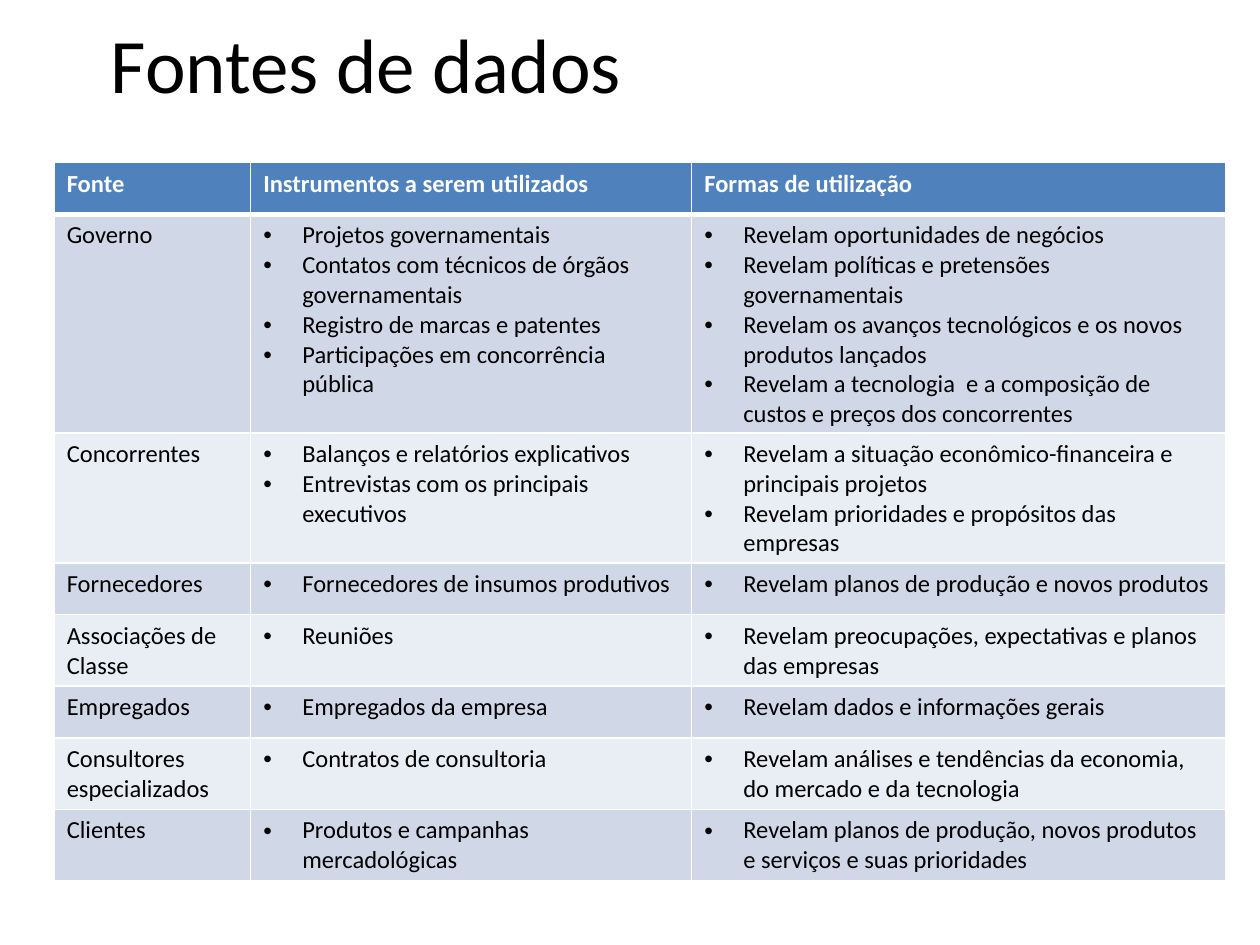
"""Build the slide on data sources with its title and table."""
import pptx
import pptx.dml.color
import pptx.enum.text
import pptx.oxml
import pptx.oxml.ns
import pptx.util
from lxml import etree

Inches, Pt = pptx.util.Inches, pptx.util.Pt
RGB = pptx.dml.color.RGBColor
BLACK, WHITE = RGB(0, 0, 0), RGB(255, 255, 255)
BLUE, DARK, LIGHT = RGB(0x4F, 0x81, 0xBD), RGB(0xD0, 0xD8, 0xE8), RGB(0xE9, 0xED, 0xF4)

TITLE = "Fontes de dados"
HEADS = ["Fonte", "Instrumentos a serem utilizados", "Formas de utilização"]
ROWS = [
    ("Governo",
     ["Projetos governamentais",
      "Contatos com técnicos de órgãos governamentais",
      "Registro de marcas e patentes",
      "Participações em concorrência pública"],
     ["Revelam oportunidades de negócios",
      "Revelam políticas e pretensões governamentais",
      "Revelam os avanços tecnológicos e os novos produtos lançados",
      "Revelam a tecnologia  e a composição de custos e preços dos concorrentes"]),
    ("Concorrentes",
     ["Balanços e relatórios explicativos",
      "Entrevistas com os principais executivos"],
     ["Revelam a situação econômico-financeira e principais projetos",
      "Revelam prioridades e propósitos das empresas"]),
    ("Fornecedores",
     ["Fornecedores de insumos produtivos"],
     ["Revelam planos de produção e novos produtos"]),
    ("Associações de Classe",
     ["Reuniões"],
     ["Revelam preocupações, expectativas e planos das empresas"]),
    ("Empregados",
     ["Empregados da empresa"],
     ["Revelam dados e informações gerais"]),
    ("Consultores especializados",
     ["Contratos de consultoria"],
     ["Revelam análises e tendências da economia, do mercado e da tecnologia"]),
    ("Clientes",
     ["Produtos e campanhas mercadológicas"],
     ["Revelam planos de produção, novos produtos e serviços e suas prioridades"]),
]
WIDTHS = [1.56, 3.5, 4.24]
HIGH = 0.41
INDENT = Inches(0.31)
HEAD = {"name": "Calibri", "size": Pt(14), "bold": True}
BODY = {**HEAD, "bold": False}
BIG = {**BODY, "size": Pt(44)}


def write(par, text, form, color):
    run = par.add_run()
    run.text = text
    for key, value in form.items():
        setattr(run.font, key, value)
    run.font.color.rgb = color


def bullet(par):
    props = par._p.get_or_add_pPr()
    props.set("marL", str(INDENT))
    props.set("indent", str(-INDENT))
    etree.SubElement(props, pptx.oxml.ns.qn("a:buFont"), typeface="Arial")
    etree.SubElement(props, pptx.oxml.ns.qn("a:buChar"), char="•")


def border(cell, base):
    props = cell._tc.get_or_add_tcPr()
    for side, width in zip("LRTB", (1, 1, 1, base)):
        props.append(pptx.oxml.parse_xml(
            f'<a:ln{side} {pptx.oxml.ns.nsdecls("a")} w="{Pt(width)}"><a:solidFill>'
            f'<a:srgbClr val="{WHITE}"/></a:solidFill></a:ln{side}>'))


def fill(cell, item, form, color, back, base):
    border(cell, base)
    cell.fill.solid()
    cell.fill.fore_color.rgb = back
    listed = isinstance(item, list)
    frame = cell.text_frame
    for num, text in enumerate(item if listed else [item]):
        par = frame.add_paragraph() if num else frame.paragraphs[0]
        if listed:
            bullet(par)
        write(par, text, form, color)


def main():
    deck = pptx.Presentation()
    deck.slide_width, deck.slide_height = Inches(10), Inches(7.5)
    slide = deck.slides.add_slide(deck.slide_layouts[6])

    box = slide.shapes.add_textbox(Inches(0.5), 0, Inches(4.81), Inches(0.99))
    frame = box.text_frame
    frame.word_wrap = True
    frame.vertical_anchor = pptx.enum.text.MSO_ANCHOR.MIDDLE
    par = frame.paragraphs[0]
    par.alignment = pptx.enum.text.PP_ALIGN.CENTER
    write(par, TITLE, BIG, BLACK)

    count = len(ROWS) + 1
    table = slide.shapes.add_table(
        count, len(HEADS), Inches(0.43), Inches(1.29),
        Inches(sum(WIDTHS)), Inches(HIGH * count)).table
    for col, width in zip(table.columns, WIDTHS):
        col.width = Inches(width)
    for num, items in enumerate([HEADS, *ROWS]):
        table.rows[num].height = Inches(HIGH)
        if num == 0:
            look = (HEAD, WHITE, BLUE, 3)
        else:
            look = (BODY, BLACK, DARK if num % 2 else LIGHT, 1)
        for cell, item in zip(table.rows[num].cells, items):
            fill(cell, item, *look)

    deck.save("out.pptx")


if __name__ == "__main__":
    main()
